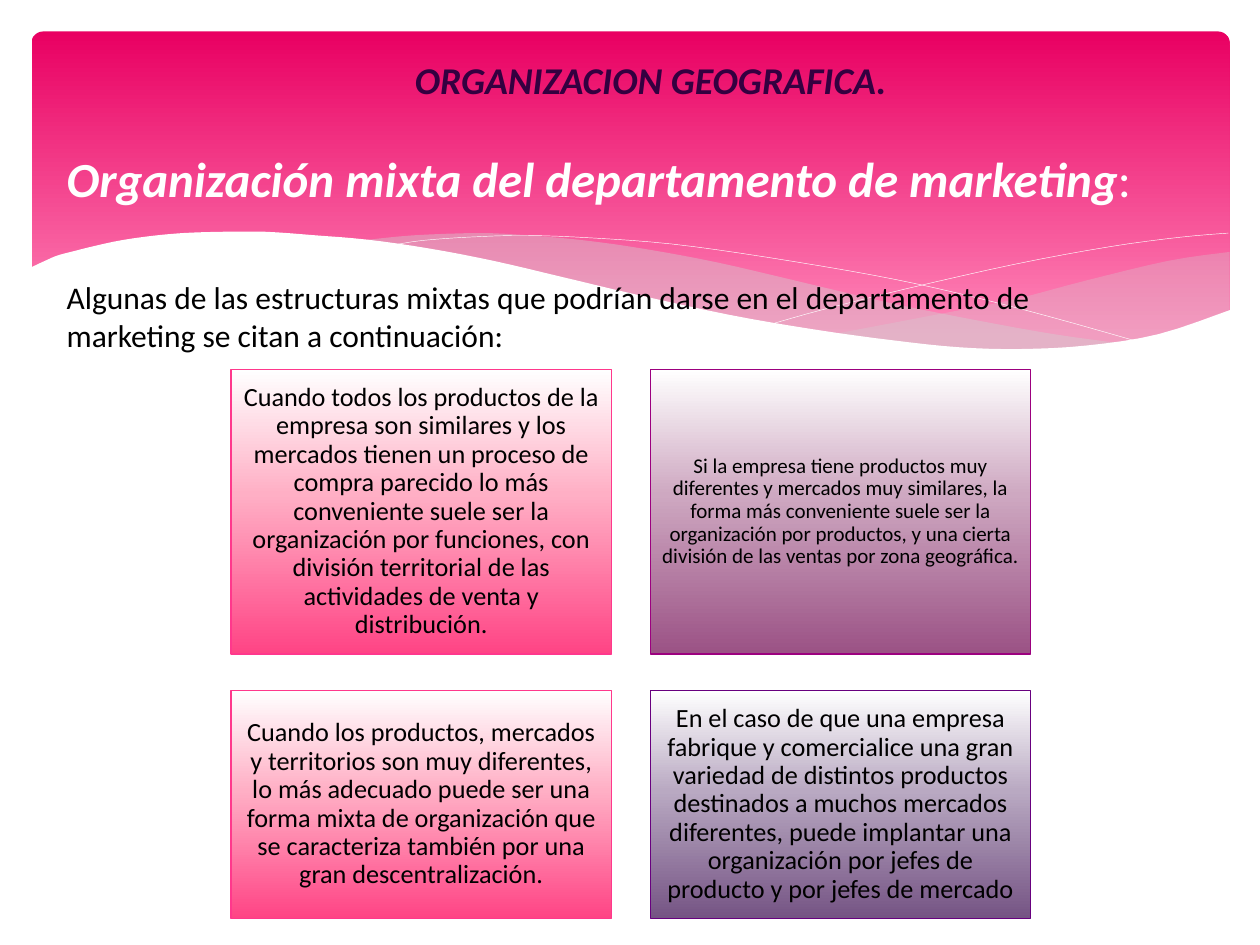
from lxml import etree
from pptx import Presentation
from pptx.dml.color import RGBColor
from pptx.enum.shapes import MSO_SHAPE
from pptx.enum.text import MSO_ANCHOR, PP_ALIGN
from pptx.oxml.ns import qn
from pptx.util import Pt

RECTANGLE, ROUNDED = MSO_SHAPE.RECTANGLE, MSO_SHAPE.ROUNDED_RECTANGLE
TOP, MIDDLE = MSO_ANCHOR.TOP, MSO_ANCHOR.MIDDLE
LEFT, CENTER = PP_ALIGN.LEFT, PP_ALIGN.CENTER

FONT = "Calibri"
WHITE = RGBColor(0xFF, 0xFF, 0xFF)
BLACK = RGBColor(0, 0, 0)
PLUM = RGBColor(0x34, 0x00, 0x40)
GREY = RGBColor(0xD2, 0xD2, 0xD2)
PINK_LINE = RGBColor(0xFF, 0x38, 0x8C)
MAGENTA_LINE = RGBColor(0x9C, 0x00, 0x7F)
PURPLE_LINE = RGBColor(0x68, 0x00, 0x7F)

# Gradients run from top to bottom: (percent, colour)
BANNER_STOPS = [(0, RGBColor(0xE9, 0x00, 0x62)), (90, RGBColor(0xFF, 0x88, 0xBA))]
PINK_STOPS = [(0, WHITE), (44, RGBColor(0xFF, 0xAF, 0xC5)), (100, RGBColor(0xFF, 0x44, 0x85))]
MAGENTA_STOPS = [(0, WHITE), (44, RGBColor(0xCE, 0xA8, 0xC1)), (100, RGBColor(0x9B, 0x52, 0x85))]
PURPLE_STOPS = [(0, WHITE), (44, RGBColor(0xB9, 0xA9, 0xC2)), (100, RGBColor(0x75, 0x54, 0x84))]

TITLE = "ORGANIZACION GEOGRAFICA."
SUBTITLE = ["Organización mixta del departamento de marketing", ":"]
INTRO = ("Algunas de las estructuras mixtas que podrían darse en el departamento "
         "de marketing se citan a continuación:")

# Text, size, gradient, line colour; two cards to a row
CARDS = [
    ("Cuando todos los productos de la empresa son similares y los mercados tienen un "
     "proceso de compra parecido lo más conveniente suele ser la organización por "
     "funciones, con división territorial de las actividades de venta y distribución.",
     15, PINK_STOPS, PINK_LINE),
    ("Si la empresa tiene productos muy diferentes y mercados muy similares, la forma más "
     "conveniente suele ser la organización por productos, y una cierta división de las "
     "ventas por zona geográfica.",
     12, MAGENTA_STOPS, MAGENTA_LINE),
    ("Cuando los productos, mercados y territorios son muy diferentes, lo más adecuado "
     "puede ser una forma mixta de organización que se caracteriza también por una gran "
     "descentralización.",
     15, PINK_STOPS, PINK_LINE),
    ("En el caso de que una empresa fabrique y comercialice una gran variedad de distintos "
     "productos destinados a muchos mercados diferentes, puede implantar una organización "
     "por jefes de producto y por jefes de mercado",
     15, PURPLE_STOPS, PURPLE_LINE),
]
CARD_LEFT, CARD_WIDTH, CARD_GAP = 132, 217.4, 22.2
CARD_ROWS = [(211, 162.7), (394.5, 130.3)]  # top, height

# Knots of the smooth edges of the waves
RIGHT_RIBBON = [
    [(702.7, 144), (668, 149), (620, 160.5), (580, 171), (542, 178.5), (476, 191)],
    [(476, 191), (517, 196.5), (553, 199.2), (586, 200), (621, 199), (652, 195.5),
     (678, 189.5), (702.7, 178)],
]
LONG_RIBBON = [
    [(642.5, 196.5), (602.5, 191), (558, 183), (508, 173), (453, 160), (410, 150),
     (370, 142.5), (335, 137.5), (302, 134.5), (274, 133.2), (236, 134.5), (206, 137.5)],
    [(206, 137.5), (246, 143), (291, 152), (323, 160), (382, 173), (433, 183.5),
     (479, 191.5), (520, 197), (557, 199.5), (589, 200), (617, 199.5), (642.5, 196.5)],
]
FALLING_LINE = [[(222.5, 140.5), (241, 137.5), (269, 135.5), (300, 134.6), (338, 136),
                 (384, 139.5), (438, 147), (500, 157.5), (547, 167.5), (598, 180.5),
                 (653, 196)]]
RISING_LINE = [[(441.5, 185), (470, 177), (518, 165), (580, 151), (634, 141),
                (675, 135.5), (702, 133.2)]]
WHITE_WAVE = [
    [(703.5, 177), (662, 191), (621, 197.5), (583, 199.5), (548, 198.5), (510, 194.5),
     (466.5, 188.5), (417, 180), (362, 168), (322, 158.5), (281.5, 149), (245, 142),
     (210, 137), (180, 134.5), (152, 132.5), (127, 132.5), (105, 133.2), (85.5, 135),
     (68.5, 137.5), (54.5, 140.5), (42.5, 143.5), (33, 146), (26, 149), (16.5, 153.4)],
    [(16.5, 237), (703.5, 237)],
]
# Edges, fill colour, opacity in percent; no fill means a white hairline
WAVES = [
    (RIGHT_RIBBON, GREY, 29),
    (LONG_RIBBON, GREY, 40),
    (FALLING_LINE, None, None),
    (RISING_LINE, None, None),
    (WHITE_WAVE, WHITE, 100),
]


def smooth(knots, steps=4):
    """Return points of a Catmull-Rom curve through the knots."""
    padded = [knots[0], *knots, knots[-1]]
    points = [knots[0]]
    for a, b, c, d in zip(padded, padded[1:], padded[2:], padded[3:]):
        for step in range(1, steps + 1):
            t = step / steps
            points.append(tuple(
                (2 * q + (r - p) * t + (2 * p - 5 * q + 4 * r - s) * t ** 2
                 + (3 * q - p - 3 * r + s) * t ** 3) / 2
                for p, q, r, s in zip(a, b, c, d)))
    return points


def add_wave(page, edges, color, opacity):
    points = [(Pt(x), Pt(y)) for edge in edges for x, y in smooth(edge)]
    builder = page.shapes.build_freeform(*points[0])
    builder.add_line_segments(points[1:], close=color is not None)
    wave = builder.convert_to_shape()
    wave.shadow.inherit = False
    if color is None:
        wave.fill.background()
        wave.line.color.rgb = WHITE
        wave.line.width = Pt(0.25)
        return
    wave.line.fill.background()
    wave.fill.solid()
    wave.fill.fore_color.rgb = color
    if opacity < 100:
        tint = wave.fill._xPr.find(".//" + qn("a:srgbClr"))
        etree.SubElement(tint, qn("a:alpha")).set("val", str(opacity * 1000))


def add_panel(page, kind, left, top, width, height, stops):
    """Add a shape with a vertical gradient and no shadow."""
    panel = page.shapes.add_shape(kind, Pt(left), Pt(top), Pt(width), Pt(height))
    panel.shadow.inherit = False
    panel.fill.gradient()
    gradient = panel.fill._xPr.find(qn("a:gradFill"))
    stop_list = gradient.find(qn("a:gsLst"))
    for stop in list(stop_list):
        stop_list.remove(stop)
    for percent, color in stops:
        stop = etree.SubElement(stop_list, qn("a:gs"), pos=str(percent * 1000))
        etree.SubElement(stop, qn("a:srgbClr"), val=str(color))
    direction = gradient.find(qn("a:lin"))
    direction.set("ang", "5400000")
    direction.set("scaled", "0")
    return panel


def write(shape, texts, size, color, align=LEFT, anchor=TOP, insets=(7.2, 3.6), bold=False):
    """Fill a shape with one paragraph, one run to each text."""
    frame = shape.text_frame
    frame.word_wrap = True
    frame.vertical_anchor = anchor
    frame.margin_left = frame.margin_right = Pt(insets[0])
    frame.margin_top = frame.margin_bottom = Pt(insets[1])
    para = frame.paragraphs[0]
    para.alignment = align
    for text in texts:
        span = para.add_run()
        span.text = text
        span.font.name = FONT
        span.font.size = Pt(size)
        span.font.color.rgb = color
        span.font.bold = span.font.italic = bold
    return para


def add_text(page, left, top, width, height, *content, **style):
    box = page.shapes.add_textbox(Pt(left), Pt(top), Pt(width), Pt(height))
    return write(box, *content, **style)


def main():
    deck = Presentation()
    deck.slide_width, deck.slide_height = Pt(720), Pt(540)
    page = deck.slides.add_slide(deck.slide_layouts[6])

    banner = add_panel(page, ROUNDED, 18, 18, 684.7, 194.4, BANNER_STOPS)
    banner.adjustments[0] = 0.034
    banner.line.fill.background()
    for wave in WAVES:
        add_wave(page, *wave)

    subtitle = add_text(page, 31, 81.4, 657.4, 41, SUBTITLE, 28, WHITE, bold=True)
    colon = subtitle.runs[-1].font
    colon.bold = colon.italic = False
    add_text(page, 144.7, 32.4, 454.3, 48.9, [TITLE], 21.6, PLUM,
             align=CENTER, insets=(7.2, 0), bold=True)

    for index, (text, size, stops, line_color) in enumerate(CARDS):
        row, column = divmod(index, 2)
        top, height = CARD_ROWS[row]
        left = CARD_LEFT + column * (CARD_WIDTH + CARD_GAP)
        card = add_panel(page, RECTANGLE, left, top, CARD_WIDTH, height, stops)
        card.line.color.rgb = line_color
        card.line.width = Pt(0.75)
        inset = size * 0.3
        para = write(card, [text], size, BLACK, CENTER, MIDDLE, (inset, inset))
        para.line_spacing = 0.9

    add_text(page, 31, 155.5, 612, 72.7, [INTRO], 18, BLACK)
    deck.save("out.pptx")


if __name__ == "__main__":
    main()
